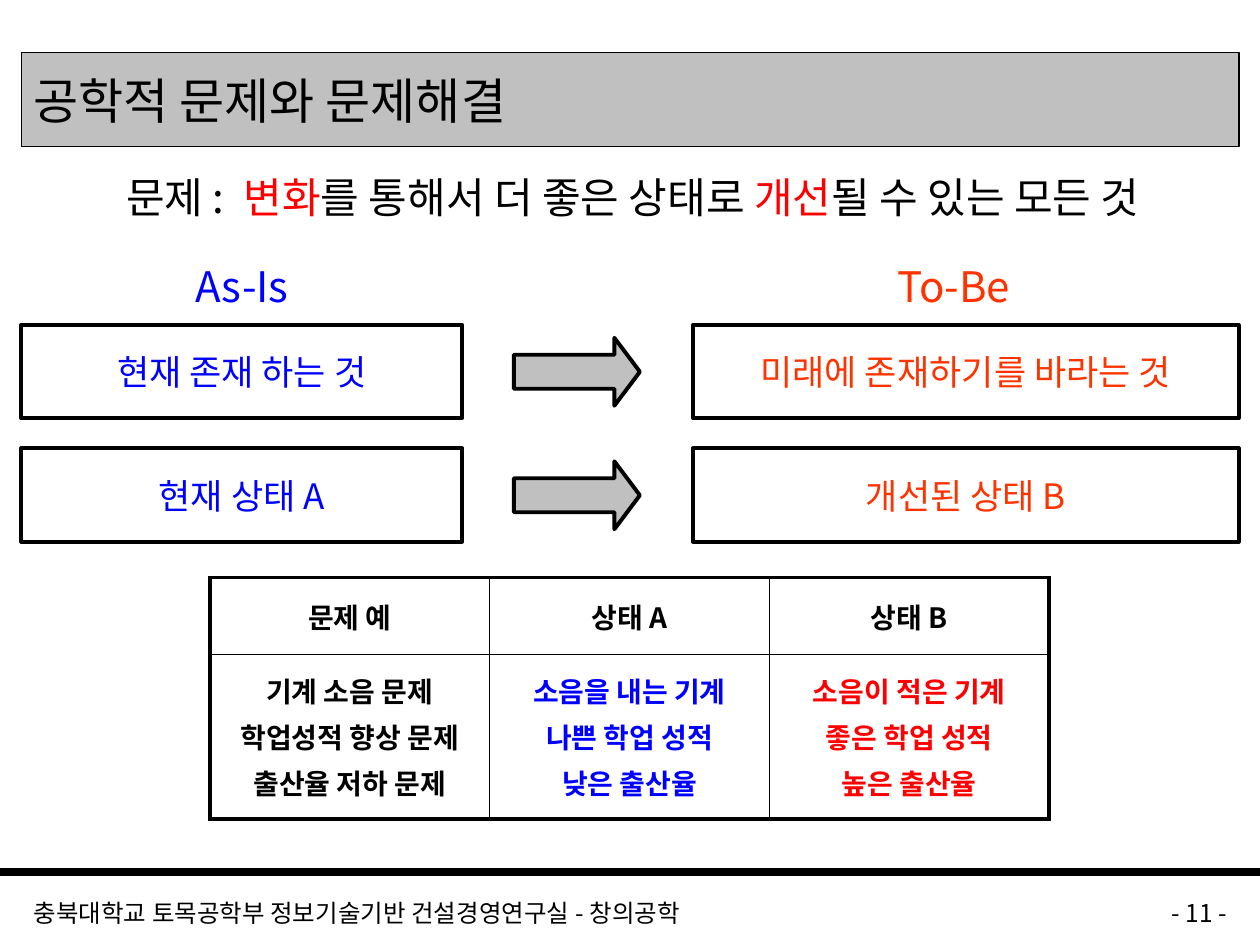
from lxml import etree
from pptx import Presentation
from pptx.dml.color import RGBColor
from pptx.enum.shapes import MSO_CONNECTOR, MSO_SHAPE
from pptx.enum.text import MSO_ANCHOR, PP_ALIGN
from pptx.oxml.ns import qn
from pptx.util import Cm, Pt

RECT, ARROW = MSO_SHAPE.RECTANGLE, MSO_SHAPE.RIGHT_ARROW
LEFT, CENTER, RIGHT = PP_ALIGN.LEFT, PP_ALIGN.CENTER, PP_ALIGN.RIGHT
TOP, MIDDLE = MSO_ANCHOR.TOP, MSO_ANCHOR.MIDDLE
FONT = "Noto Sans CJK KR"
COLORS = {"black": "000000", "gray": "C0C0C0", "blue": "0000FF",
          "red": "FF0000", "orange": "FF3300"}

STATES = [("현재 존재 하는 것", "미래에 존재하기를 바라는 것"),
          ("현재 상태 A", "개선된 상태 B")]
DEFINITION = [("문제 :  ", "black"), ("변화", "red"),
              ("를 통해서 더 좋은 상태로 ", "black"), ("개선", "red"),
              ("될 수 있는 모든 것", "black")]
EXAMPLES = [
    ("문제 예", "black", ["기계 소음 문제", "학업성적 향상 문제", "출산율 저하 문제"]),
    ("상태 A", "blue", ["소음을 내는 기계", "나쁜 학업 성적", "낮은 출산율"]),
    ("상태 B", "red", ["소음이 적은 기계", "좋은 학업 성적", "높은 출산율"]),
]


def rgb(name):
    return RGBColor.from_string(COLORS[name])


def write(tf, lines, size, color="black", align=LEFT, bold=False, before=0):
    """Fill a text frame; a line is a string or a list of (text, color) runs."""
    for i, line in enumerate(lines):
        p = tf.add_paragraph() if i else tf.paragraphs[0]
        p.alignment = align
        p.space_before = Pt(before)
        runs = [(line, color)] if isinstance(line, str) else line
        for text, run_color in runs:
            r = p.add_run()
            r.text = text
            r.font.size = Pt(size)
            r.font.bold = bold
            r.font.color.rgb = rgb(run_color)
            r.font.name = FONT
            etree.SubElement(r._r.get_or_add_rPr(), qn("a:ea"), typeface=FONT)


def outline(sp, width, fill=None):
    if fill:
        sp.fill.solid()
        sp.fill.fore_color.rgb = rgb(fill)
    else:
        sp.fill.background()
    sp.line.color.rgb = rgb("black")
    sp.line.width = Pt(width)


def add_title(s, text):
    sp = s.shapes.title
    sp.left, sp.top, sp.width, sp.height = Cm(0.43), Cm(1.06), Cm(24.55), Cm(1.9)
    outline(sp, 0.75, "gray")
    sp.text_frame.vertical_anchor = MIDDLE
    write(sp.text_frame, [text], 28)


def add_text(s, x, y, w, h, line, size, wrap=False, **fmt):
    tf = s.shapes.add_textbox(Cm(x), Cm(y), Cm(w), Cm(h)).text_frame
    tf.word_wrap = wrap
    tf.vertical_anchor = TOP
    write(tf, [line], size, **fmt)


def add_shape(s, kind, x, y, w, h, fill=None):
    sp = s.shapes.add_shape(kind, Cm(x), Cm(y), Cm(w), Cm(h))
    sp.shadow.inherit = False
    outline(sp, 2.25, fill)
    return sp


def add_box(s, x, y, w, text, color):
    tf = add_shape(s, RECT, x, y, w, 1.88).text_frame
    tf.word_wrap = False
    tf.vertical_anchor = MIDDLE
    write(tf, [text], 20, color=color, align=CENTER)


def add_arrow(s, x, y):
    sp = add_shape(s, ARROW, x, y, 2.54, 1.37, "gray")
    sp.adjustments[0], sp.adjustments[1] = 0.5, 0.375


def add_rule(s, y):
    line = s.shapes.add_connector(MSO_CONNECTOR.STRAIGHT, 0, Cm(y), Cm(25.4), Cm(y))
    line.line.color.rgb = rgb("black")
    line.line.width = Pt(4.5)
    etree.SubElement(line._element.spPr, qn("a:effectLst"))


def set_borders(cell, **widths):
    """Draw the cell edges L, R, T and B with the given widths in points."""
    tc_pr = cell._tc.get_or_add_tcPr()
    for side, width in widths.items():
        ln = etree.SubElement(tc_pr, qn(f"a:ln{side}"), w=str(Pt(width)))
        fill = etree.SubElement(ln, qn("a:solidFill"))
        etree.SubElement(fill, qn("a:srgbClr"), val=COLORS["black"])


def add_examples(s):
    last = len(EXAMPLES) - 1
    table = s.shapes.add_table(2, last + 1, Cm(4.23), Cm(11.64),
                               Cm(16.92), Cm(4.87)).table
    table.rows[0].height, table.rows[1].height = Cm(1.55), Cm(3.32)
    for j, (head, color, items) in enumerate(EXAMPLES):
        table.columns[j].width = Cm(5.64)
        for i, (lines, cell_color) in enumerate([([head], "black"), (items, color)]):
            cell = table.cell(i, j)
            set_borders(cell, L=1 if j else 2.25, R=2.25 if j == last else 1,
                        T=1 if i else 2.25, B=2.25 if i else 1)
            cell.fill.background()
            cell.vertical_anchor = MIDDLE
            write(cell.text_frame, lines, 16, color=cell_color,
                  align=CENTER, bold=True, before=3.2)


def main():
    prs = Presentation()
    prs.slide_width, prs.slide_height = Cm(25.4), Cm(19.05)
    s = prs.slides.add_slide(prs.slide_layouts[5])

    add_rule(s, 17.58)
    add_text(s, 0.43, 17.98, 19.89, 0.64,
             "충북대학교 토목공학부 정보기술기반 건설경영연구실 - 창의공학", 14, wrap=True)
    add_text(s, 20.75, 17.98, 4.24, 0.64, "- 11 -", 14, wrap=True, align=RIGHT)

    add_title(s, "공학적 문제와 문제해결")
    add_text(s, 0.86, 3.33, 23.8, 1.3, DEFINITION, 24, align=CENTER)
    add_text(s, 3.56, 5.13, 2.64, 1.27, "As-Is", 24, color="blue", align=CENTER)
    add_text(s, 17.7, 5.13, 3.05, 1.27, "To-Be", 24, color="orange", align=CENTER)

    for i, (as_is, to_be) in enumerate(STATES):
        y = 6.55 + 2.49 * i
        add_box(s, 0.43, y, 8.89, as_is, "blue")
        add_arrow(s, 10.36, y + 0.26)
        add_box(s, 13.97, y, 11, to_be, "orange")

    add_examples(s)
    prs.save("out.pptx")


if __name__ == "__main__":
    main()
